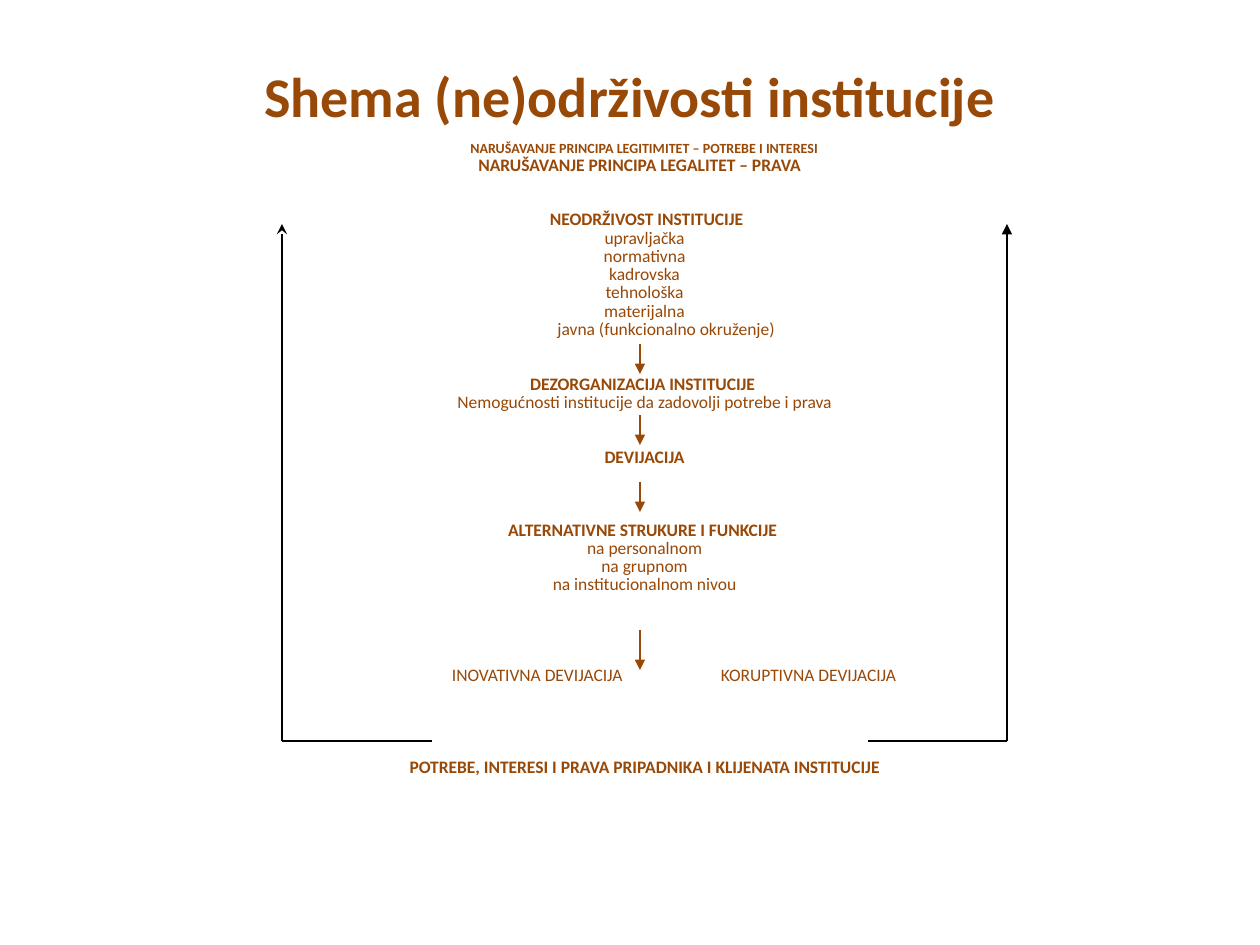
from pptx import Presentation
from pptx.dml.color import RGBColor
from pptx.enum import shapes, text
from pptx.oxml.ns import qn
from pptx import util as u
from lxml import etree

SCALE = 914400 / 126
BROWN, BLACK = "984807", "000000"
ROW_GAP, ROW_PITCH = 2, 10.42


def px(value):
    return u.Emu(round(value * SCALE))


def color(value):
    return RGBColor.from_string(value)


class Diagram:
    font = "Calibri"

    def __init__(self, page):
        self.page = page

    def style(self, para, size, bold):
        for span in para.runs:
            span.font.name = self.font
            span.font.size = u.Pt(size)
            span.font.bold = bold
            span.font.color.rgb = color(BROWN)

    def title(self, words, left, top, width, height):
        box = self.page.shapes.title
        box.left, box.top, box.width, box.height = map(px, (left, top, width, height))
        frame = box.text_frame
        frame.text = words
        frame.vertical_anchor = text.MSO_ANCHOR.MIDDLE
        frame.paragraphs[0].alignment = text.PP_ALIGN.CENTER
        self.style(frame.paragraphs[0], 32, True)

    def outline(self, rows, left, top, width, height):
        box = self.page.shapes.add_textbox(*map(px, (left, top, width, height)))
        frame = box.text_frame
        frame.word_wrap = True
        for number, (words, size, bold, skipped, indent) in enumerate(rows):
            para = frame.add_paragraph() if number else frame.paragraphs[0]
            para.text = words
            para.alignment = text.PP_ALIGN.CENTER
            para.line_spacing = 0.7
            if number:
                para.space_before = u.Pt(ROW_GAP + skipped * ROW_PITCH)
            para._p.get_or_add_pPr().set("marL", str(px(indent)))
            self.style(para, size, bold)

    def label(self, words, left, top, width, height):
        box = self.page.shapes.add_textbox(*map(px, (left, top, width, height)))
        frame = box.text_frame
        frame.word_wrap = True
        frame.margin_left = frame.margin_right = 0
        frame.margin_top = frame.margin_bottom = 0
        frame.text = words
        frame.paragraphs[0].line_spacing = 0.7
        self.style(frame.paragraphs[0], 10, False)

    def line(self, start, end, ink, head=None):
        link = self.page.shapes.add_connector(
            shapes.MSO_CONNECTOR.STRAIGHT, *map(px, (*start, *end)))
        link.line.color.rgb = color(ink)
        link.line.width = u.Pt(0.75)
        if head:
            etree.SubElement(link.line._get_or_add_ln(), qn("a:tailEnd"), type=head)
        etree.SubElement(link._element.spPr, qn("a:effectLst"))


def main():
    deck = Presentation()
    deck.slide_width, deck.slide_height = px(1260), px(945)
    diagram = Diagram(deck.slides.add_slide(deck.slide_layouts[5]))

    diagram.title("Shema (ne)održivosti institucije", 63, 35, 1134, 120)
    diagram.outline([
        ("NARUŠAVANJE PRINCIPA LEGITIMITET – POTREBE I INTERESI", 8, True, 0, 10),
        ("NARUŠAVANJE PRINCIPA LEGALITET – PRAVA", 10, True, 0, 0),
        ("NEODRŽIVOST INSTITUCIJE", 10, True, 2, 14),
        ("upravljačka", 10, False, 0, 10),
        ("normativna", 10, False, 0, 10),
        ("kadrovska", 10, False, 0, 10),
        ("tehnološka", 10, False, 0, 10),
        ("materijalna", 10, False, 0, 10),
        ("javna (funkcionalno okruženje)", 10, False, 0, 53),
        ("DEZORGANIZACIJA INSTITUCIJE", 10, True, 2, 6),
        ("Nemogućnosti institucije da zadovolji potrebe i prava", 10, False, 0, 10),
        ("DEVIJACIJA", 10, True, 2, 10),
        ("ALTERNATIVNE STRUKURE I FUNKCIJE", 10, True, 3, 6),
        ("na personalnom", 10, False, 0, 10),
        ("na grupnom", 10, False, 0, 10),
        ("na institucionalnom nivou", 10, False, 0, 10),
        ("POTREBE, INTERESI I PRAVA PRIPADNIKA I KLIJENATA INSTITUCIJE", 10, True, 9, 10),
    ], 123, 138, 1033, 728)

    for words, left in (("INOVATIVNA DEVIJACIJA", 452), ("KORUPTIVNA DEVIJACIJA", 721)):
        diagram.label(words, left, 670, 200, 18)

    for top, bottom in ((344, 374), (415, 445), (482, 512), (630, 670)):
        diagram.line((640, top), (640, bottom), BROWN, "triangle")

    for outer, inner, head in ((282, 432, "stealth"), (1007, 868, "triangle")):
        diagram.line((outer, 741), (outer, 224), BLACK, head)
        diagram.line((outer, 741), (inner, 741), BLACK)

    deck.save("out.pptx")


if __name__ == "__main__":
    main()
